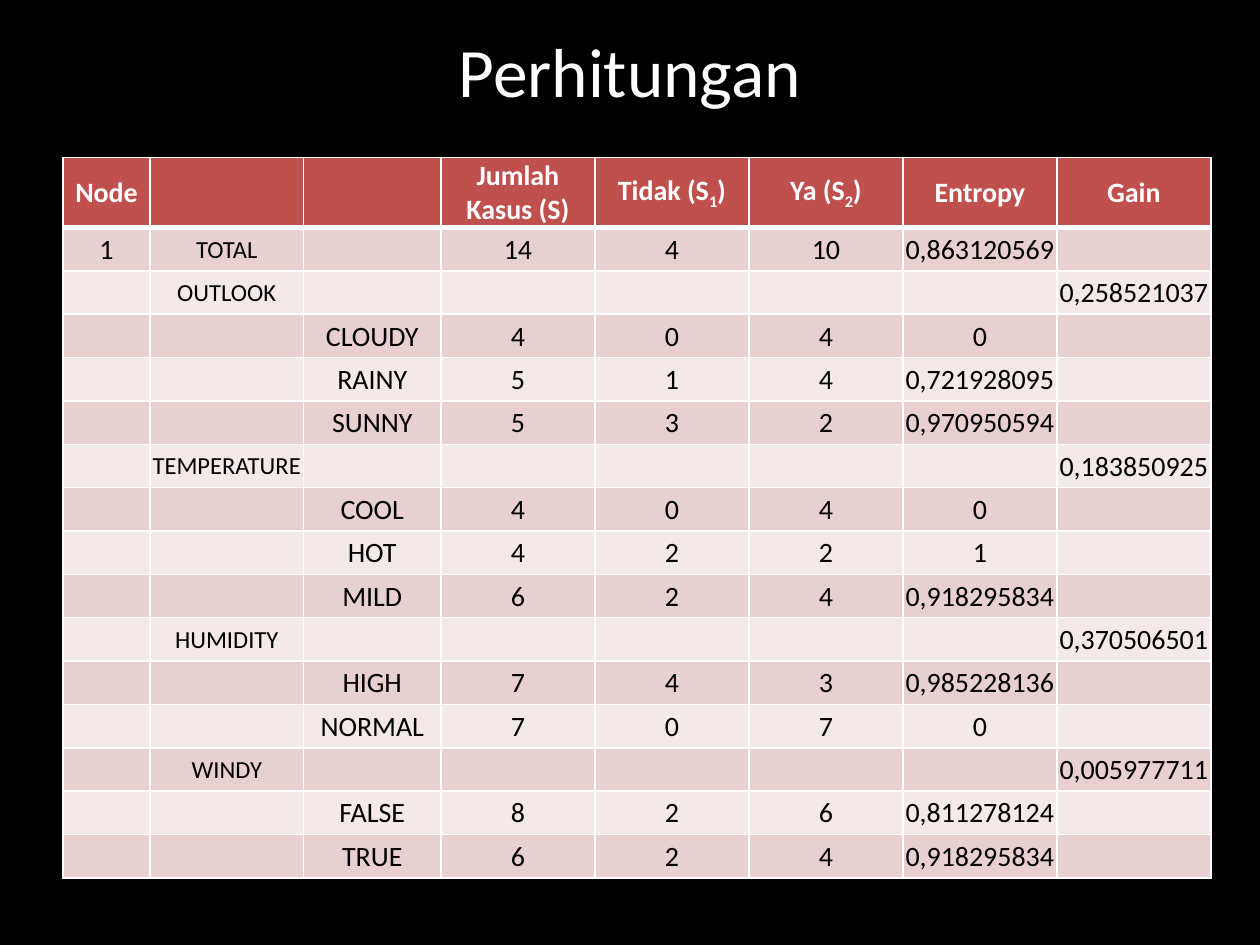
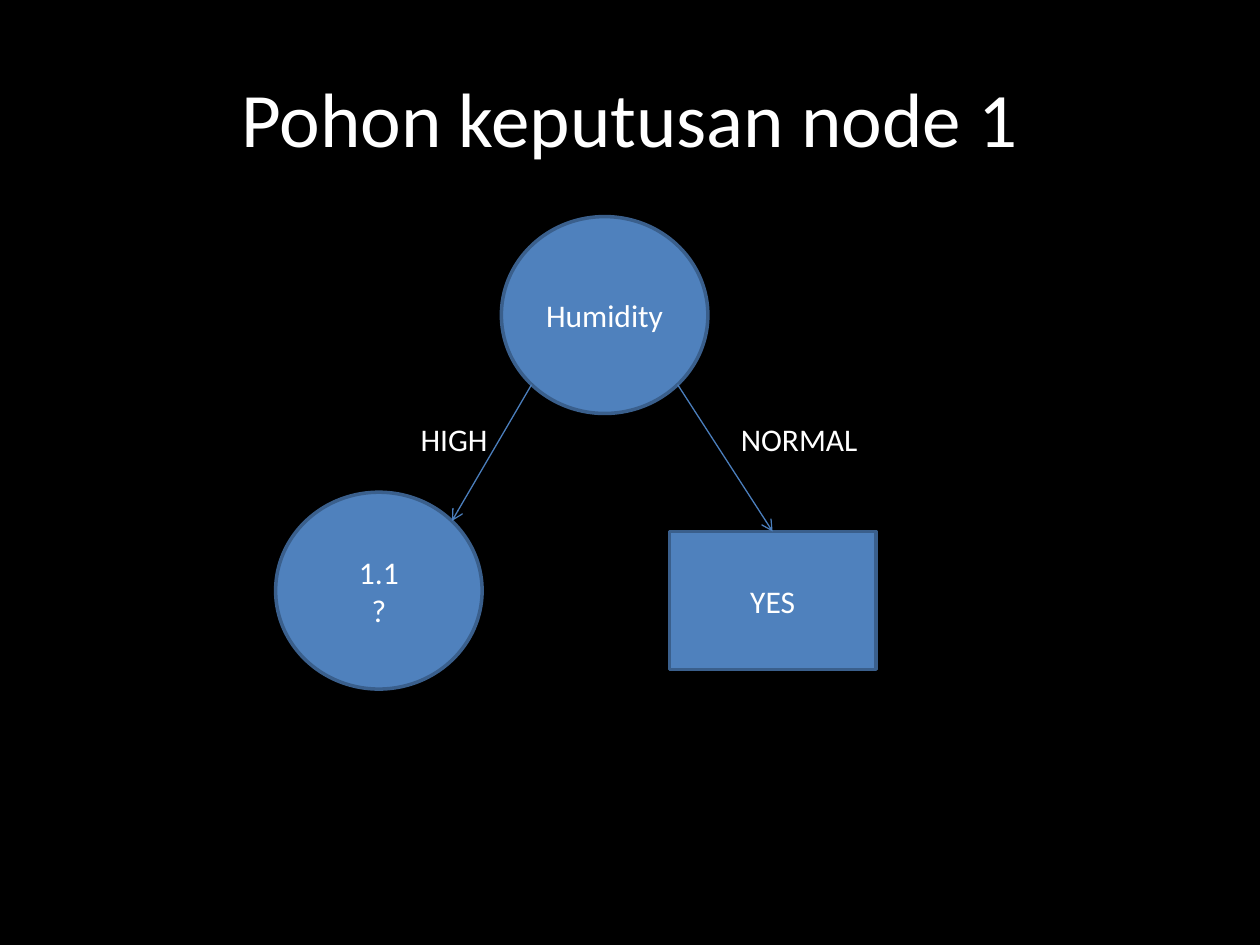
from math import sqrt

from lxml.etree import SubElement
from pptx import Presentation
from pptx.dml.color import RGBColor
from pptx.enum.shapes import MSO_CONNECTOR, MSO_SHAPE
from pptx.enum.text import MSO_ANCHOR, PP_ALIGN
from pptx.oxml import parse_xml
from pptx.oxml.ns import nsdecls, qn
from pptx.util import Pt

FONT = "Calibri"
BLACK, WHITE = "000000", "FFFFFF"
HEADER, BANDS = "C0504D", ("E8D0D0", "F4E9E9")
NODE_FILL, NODE_LINE, ARROW = "4F81BD", "3A5F8C", "4B7EBC"

COLUMNS = [49.7, 87.8, 78.5] + [88] * 5
HEADER_HEIGHT, ROW_HEIGHT = 40, 24.8
HEADINGS = ["Node", "", "", "Jumlah Kasus (S)", ("Tidak (S", "1", ")"),
            ("Ya (S", "2", ")"), "Entropy", "Gain"]
TOTAL = ["1", "TOTAL", "", "14", "4", "10", "0,863120569", ""]
# attribute, gain, then value / cases / no / yes / entropy
ATTRIBUTES = [
    ("OUTLOOK", "0,258521037", [("CLOUDY", "4", "0", "4", "0"),
                                ("RAINY", "5", "1", "4", "0,721928095"),
                                ("SUNNY", "5", "3", "2", "0,970950594")]),
    ("TEMPERATURE", "0,183850925", [("COOL", "4", "0", "4", "0"),
                                    ("HOT", "4", "2", "2", "1"),
                                    ("MILD", "6", "2", "4", "0,918295834")]),
    ("HUMIDITY", "0,370506501", [("HIGH", "7", "4", "3", "0,985228136"),
                                 ("NORMAL", "7", "0", "7", "0")]),
    ("WINDY", "0,005977711", [("FALSE", "8", "2", "6", "0,811278124"),
                              ("TRUE", "6", "2", "4", "0,918295834")]),
]


def rgb(value):
    return RGBColor.from_string(value)


def style(p, size, color=WHITE, bold=False, align=PP_ALIGN.CENTER):
    p.alignment = align
    f = p.font
    f.name, f.size, f.bold = FONT, Pt(size), bold
    f.color.rgb = rgb(color)


def new_slide(prs):
    s = prs.slides.add_slide(prs.slide_layouts[6])
    s.background.fill.solid()
    s.background.fill.fore_color.rgb = rgb(BLACK)
    return s


def add_title(s, text, top, height, size):
    tf = s.shapes.add_textbox(Pt(36), Pt(top), Pt(648), Pt(height)).text_frame
    tf.word_wrap = True
    tf.vertical_anchor = MSO_ANCHOR.MIDDLE
    tf.text = text
    style(tf.paragraphs[0], size)


def set_borders(cell, widths):
    """Draw white borders; widths are given for left, right, top, bottom."""
    tc_pr = cell._tc.get_or_add_tcPr()
    for i, (side, width) in enumerate(zip("LRTB", widths)):
        tc_pr.insert(i, parse_xml(
            f'<a:ln{side} {nsdecls("a")} w="{Pt(width)}"><a:solidFill>'
            f'<a:srgbClr val="{WHITE}"/></a:solidFill></a:ln{side}>'))


def fill_cell(cell, content, fill, size, color, bold):
    """Write a string, or a (text, subscript, text) tuple."""
    cell.margin_left = cell.margin_right = cell.margin_top = Pt(0.7)
    cell.margin_bottom = 0
    cell.vertical_anchor = MSO_ANCHOR.MIDDLE
    cell.fill.solid()
    cell.fill.fore_color.rgb = rgb(fill)
    p = cell.text_frame.paragraphs[0]
    style(p, size, color, bold)
    parts = (content,) if isinstance(content, str) else content
    for i, part in enumerate(parts):
        if part:
            r = p.add_run()
            r.text = part
            if i == 1:
                r._r.get_or_add_rPr().set("baseline", "-25000")


def gain_rows():
    rows = [HEADINGS, TOTAL]
    for name, gain, values in ATTRIBUTES:
        rows.append(["", name] + [""] * 5 + [gain])
        rows += [["", "", *value, ""] for value in values]
    return rows


def add_gain_table(s, left, top):
    rows = gain_rows()
    height = HEADER_HEIGHT + ROW_HEIGHT * (len(rows) - 1)
    table = s.shapes.add_table(len(rows), len(COLUMNS), Pt(left), Pt(top),
                               Pt(sum(COLUMNS)), Pt(height)).table
    for column, width in zip(table.columns, COLUMNS):
        column.width = Pt(width)
    for i, row in enumerate(rows):
        head = i == 0
        table.rows[i].height = Pt(HEADER_HEIGHT if head else ROW_HEIGHT)
        fill = HEADER if head else BANDS[(i - 1) % 2]
        for j, content in enumerate(row):
            cell = table.cell(i, j)
            size = 14 if j == 1 else 16
            fill_cell(cell, content, fill, size, WHITE if head else BLACK, head)
            set_borders(cell, (1, 1, 3 if i == 1 else 1, 3 if head else 1))


def add_node(s, kind, x, y, w, h, text):
    sp = s.shapes.add_shape(kind, Pt(x), Pt(y), Pt(w), Pt(h))
    sp.shadow.inherit = False
    sp.fill.solid()
    sp.fill.fore_color.rgb = rgb(NODE_FILL)
    sp.line.color.rgb = rgb(NODE_LINE)
    sp.line.width = Pt(2)
    tf = sp.text_frame
    tf.word_wrap = True
    tf.vertical_anchor = MSO_ANCHOR.MIDDLE
    tf.text = text
    for p in tf.paragraphs:
        style(p, 18)


def add_arrow(s, x1, y1, x2, y2):
    c = s.shapes.add_connector(MSO_CONNECTOR.STRAIGHT,
                               Pt(x1), Pt(y1), Pt(x2), Pt(y2))
    c.line.color.rgb = rgb(ARROW)
    c.line.width = Pt(0.75)
    SubElement(c.line._get_or_add_ln(), qn("a:tailEnd"), type="arrow")
    SubElement(c._element.spPr, qn("a:effectLst"))


def add_branch_label(s, x, y, w, text):
    tf = s.shapes.add_textbox(Pt(x), Pt(y), Pt(w), Pt(29)).text_frame
    tf.word_wrap = False
    tf.text = text
    style(tf.paragraphs[0], 18, align=PP_ALIGN.LEFT)


def add_decision_tree(s, left, top):
    w, h, leaf_h = 118, 112.5, 78.75
    root_x, root_y = left + 129, top
    open_x, open_y = left, top + 157.5
    leaf_x, leaf_y = left + 225, top + 180
    add_node(s, MSO_SHAPE.OVAL, root_x, root_y, w, h, "Humidity")
    add_node(s, MSO_SHAPE.OVAL, open_x, open_y, w, h, "1.1\n?")
    add_node(s, MSO_SHAPE.RECTANGLE, leaf_x, leaf_y, w, leaf_h, "YES")

    near = (1 - sqrt(0.5)) / 2  # where the diagonals cut an ellipse
    far = 1 - near
    add_arrow(s, root_x + w * near, root_y + h * far,
              open_x + w * far, open_y + h * near)
    add_arrow(s, root_x + w * far, root_y + h * far, leaf_x + w / 2, leaf_y)
    add_branch_label(s, left + 258.75, top + 112.5, 82, "NORMAL")
    add_branch_label(s, left + 75.75, top + 112.5, 53, "HIGH")


def main():
    prs = Presentation()
    prs.slide_width, prs.slide_height = Pt(720), Pt(540)

    s = new_slide(prs)
    add_title(s, "Perhitungan", 11.5, 57, 39.6)
    add_gain_table(s, 36, 90)

    s = new_slide(prs)
    add_title(s, "Pohon keputusan node 1", 21.6, 90, 44)
    add_decision_tree(s, 157.5, 123.75)

    prs.save("out.pptx")


if __name__ == "__main__":
    main()
